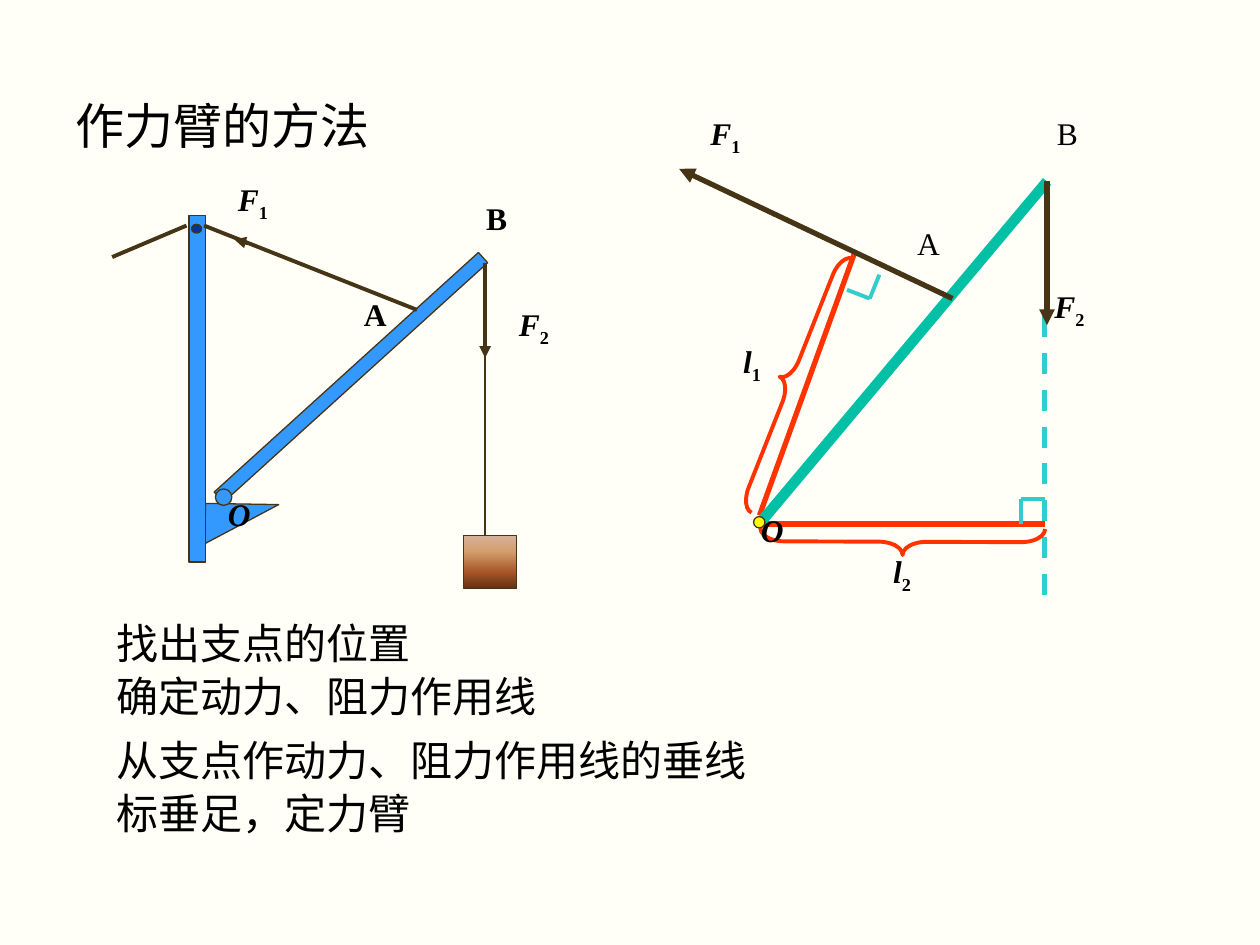
import pptx
import pptx.dml.color
import pptx.enum.dml
import pptx.enum.shapes
import pptx.enum.text
import pptx.oxml.ns
import pptx.util
from lxml import etree

Pt = pptx.util.Pt
RGBColor = pptx.dml.color.RGBColor
Shape = pptx.enum.shapes.MSO_SHAPE
qn = pptx.oxml.ns.qn

CREAM = RGBColor(0xFF, 0xFF, 0xF7)
BLACK = RGBColor(0x00, 0x00, 0x00)
BROWN = RGBColor(0x46, 0x34, 0x16)
BLUE = RGBColor(0x33, 0x99, 0xFF)
NAVY = RGBColor(0x00, 0x33, 0x99)
RED = RGBColor(0xFF, 0x33, 0x00)
CYAN = RGBColor(0x33, 0xCC, 0xCC)
TEAL = RGBColor(0x02, 0xC0, 0xA5)
YELLOW = RGBColor(0xFF, 0xFF, 0x00)
WOOD = [(0, RGBColor(0xD6, 0xB1, 0x9C)), (30, RGBColor(0xD4, 0x9E, 0x6C)),
        (70, RGBColor(0xA6, 0x55, 0x28)), (100, RGBColor(0x66, 0x30, 0x12))]
LATIN, CHINESE = "Times New Roman", "Noto Sans CJK SC"


def write_text(para, text, size=18, name=LATIN, bold=False, italic=False, baseline=0):
    """Append one formatted span to a paragraph."""
    span = para.add_run()
    span.text = text
    font = span.font
    font.size, font.name, font.bold, font.italic = Pt(size), name, bold, italic
    font.color.rgb = BLACK
    properties = span._r.get_or_add_rPr()
    etree.SubElement(properties, qn("a:ea"), typeface=CHINESE)
    if baseline:
        properties.set("baseline", str(baseline * 1000))


class Diagram:
    """Holds the style and the current slide."""

    def __init__(self, page):
        self.page = page
        self.shapes = page.shapes
        page.background.fill.solid()
        page.background.fill.fore_color.rgb = CREAM

    def place(self, box, left, top, width, height, wrap=False):
        box.left, box.top, box.width, box.height = map(Pt, (left, top, width, height))
        frame = box.text_frame
        frame.word_wrap = wrap
        frame.auto_size = pptx.enum.text.MSO_AUTO_SIZE.SHAPE_TO_FIT_TEXT
        frame.vertical_anchor = pptx.enum.text.MSO_ANCHOR.TOP
        return frame

    def title(self, text, *area):
        para = self.place(self.shapes.title, *area).paragraphs[0]
        para.alignment = pptx.enum.text.PP_ALIGN.LEFT
        write_text(para, text, size=28, name=CHINESE)

    def steps(self, items, *area):
        frame = self.place(self.page.placeholders[1], *area, wrap=True)
        for index, (text, gap) in enumerate(items):
            para = frame.add_paragraph() if index else frame.paragraphs[0]
            properties = para._p.get_or_add_pPr()
            properties.set("marL", "0")
            properties.set("indent", "0")
            etree.SubElement(properties, qn("a:buNone"))
            para.space_before = Pt(gap)
            write_text(para, text, size=24)

    def label(self, symbol, left, top, index="", bold=True, italic=True, width=32, height=36):
        box = self.shapes.add_textbox(0, 0, 0, 0)
        para = self.place(box, left, top, width, height).paragraphs[0]
        write_text(para, symbol, bold=bold, italic=italic)
        if index:
            write_text(para, index, bold=bold, baseline=-25)

    def line(self, *points, color=BROWN, weight=2.25, dashed=False, arrow=False):
        """Join the points by straight segments."""
        for start, end in zip(points, points[1:]):
            segment = self.shapes.add_connector(
                pptx.enum.shapes.MSO_CONNECTOR.STRAIGHT, *map(Pt, start + end))
            segment.line.color.rgb = color
            segment.line.width = Pt(weight)
            if dashed:
                segment.line.dash_style = pptx.enum.dml.MSO_LINE.DASH
            if arrow:
                etree.SubElement(segment.line._get_or_add_ln(), qn("a:tailEnd"), type="triangle")
            etree.SubElement(segment._element.spPr, qn("a:effectLst"))

    def shape(self, kind, left, top, width, height, fill=BLUE, color=BROWN, weight=0.75, turn=0):
        box = self.shapes.add_shape(kind, *map(Pt, (left, top, width, height)))
        box.rotation = turn
        box.shadow.inherit = False
        box.line.color.rgb = color
        box.line.width = Pt(weight)
        if fill is None:
            box.fill.background()
        else:
            box.fill.solid()
            box.fill.fore_color.rgb = fill
        return box

    def brace(self, *area, curve, turn):
        box = self.shape(Shape.LEFT_BRACE, *area, fill=None, color=RED, weight=2.25, turn=turn)
        box.adjustments[0], box.adjustments[1] = curve, 0.5

    def weight(self, *area):
        box = self.shape(Shape.RECTANGLE, *area)
        box.fill.gradient()
        box.fill.gradient_angle = 270
        stops = box._element.spPr.find(qn("a:gradFill")).find(qn("a:gsLst"))
        for stop in list(stops):
            stops.remove(stop)
        for position, color in WOOD:
            stop = etree.SubElement(stops, qn("a:gs"), pos=str(position * 1000))
            etree.SubElement(stop, qn("a:srgbClr"), val=str(color))


def draw_lever_arms(diagram):
    # Lever arms, line of action and right-angle marks
    diagram.line((488, 145.5), (434, 294.5), color=RED, weight=3)
    diagram.line((597, 180.7), (597, 344), color=CYAN, weight=3, dashed=True)
    diagram.line((434, 299.5), (597, 299.5), color=RED, weight=3)
    diagram.line((597, 285), (583.2, 285), (583.2, 299.5), color=CYAN)
    diagram.line((484, 165.6), (497, 170.6), (502.5, 157), color=CYAN)
    diagram.brace(445, 139.7, 13.7, 156.2, curve=0.949, turn=21.6)
    diagram.brace(508.3, 228.2, 15.1, 162.7, curve=0.906, turn=270.2)
    diagram.label("l", 503.3, 311.8, "2", width=25.2, height=28.8)
    diagram.label("l", 417.6, 192.2, "1", width=25.2, height=28.8)

    # Lever and forces
    end = (598.3, 103.7)
    diagram.line((435.6, 297.4), end, color=TEAL, weight=6)
    diagram.line(end, (598.3, 185.8), weight=3, arrow=True)
    diagram.line((544.3, 170.6), (388.1, 96.5), weight=3, arrow=True)
    diagram.label("B", 596.9, 61.9, bold=False, italic=False, width=30.2)
    diagram.label("A", 517, 124.6, bold=False, italic=False)
    diagram.label("F", 595.4, 160.6, "2", width=38.2)
    diagram.label("F", 398.9, 61.9, "1", width=38.2)
    diagram.label("O", 427.7, 288.7)
    diagram.shape(Shape.OVAL, 430.6, 295.2, 6.5, 6.5, fill=YELLOW)


def draw_crane(diagram):
    # Bracket, beam, post and pulley
    diagram.shape(Shape.RIGHT_TRIANGLE, 126.7, 278.6, 23, 41.8, turn=90.9)
    diagram.shape(Shape.RECTANGLE, 196.6, 113.8, 7.9, 203.8, turn=47.8)
    diagram.shape(Shape.RECTANGLE, 108, 123.1, 9.4, 198)
    diagram.shape(Shape.OVAL, 109.4, 128.2, 5.8, 5, fill=NAVY)

    # Ropes, forces and hanging weight
    diagram.line((106.6, 128.9), (64.1, 146.9))
    diagram.line((238.3, 177.1), (116.6, 128.9))
    diagram.line((141.8, 139), (133.9, 136.8), arrow=True)
    diagram.line((277.2, 150.5), (277.2, 204.5), arrow=True)
    diagram.line((277.2, 198), (277.2, 306), weight=0.75)
    diagram.weight(265, 306, 30.2, 30.2)

    # Labels and pivot
    diagram.label("F", 289.4, 170.6, "2", width=38.2)
    diagram.label("F", 128.9, 99.4, "1", width=38.2)
    diagram.label("B", 270.7, 110.2, italic=False, width=30.2)
    diagram.label("A", 200.9, 164.9, italic=False)
    diagram.label("O", 123.1, 279.4)
    diagram.shape(Shape.OVAL, 123.1, 279.4, 9.4, 9.4)


def main():
    deck = pptx.Presentation()
    deck.slide_width, deck.slide_height = Pt(720), Pt(540)
    diagram = Diagram(deck.slides.add_slide(deck.slide_layouts[1]))
    diagram.title("作力臂的方法", 36, 51, 182.4, 41)
    diagram.steps([("找出支点的位置", 0), ("确定动力、阻力作用线", 1.8),
                   ("从支点作动力、阻力作用线的垂线", 7.5), ("标垂足，定力臂", 1.8)],
                  59.3, 349, 380, 157)
    draw_lever_arms(diagram)
    draw_crane(diagram)
    deck.save("out.pptx")


if __name__ == "__main__":
    main()
